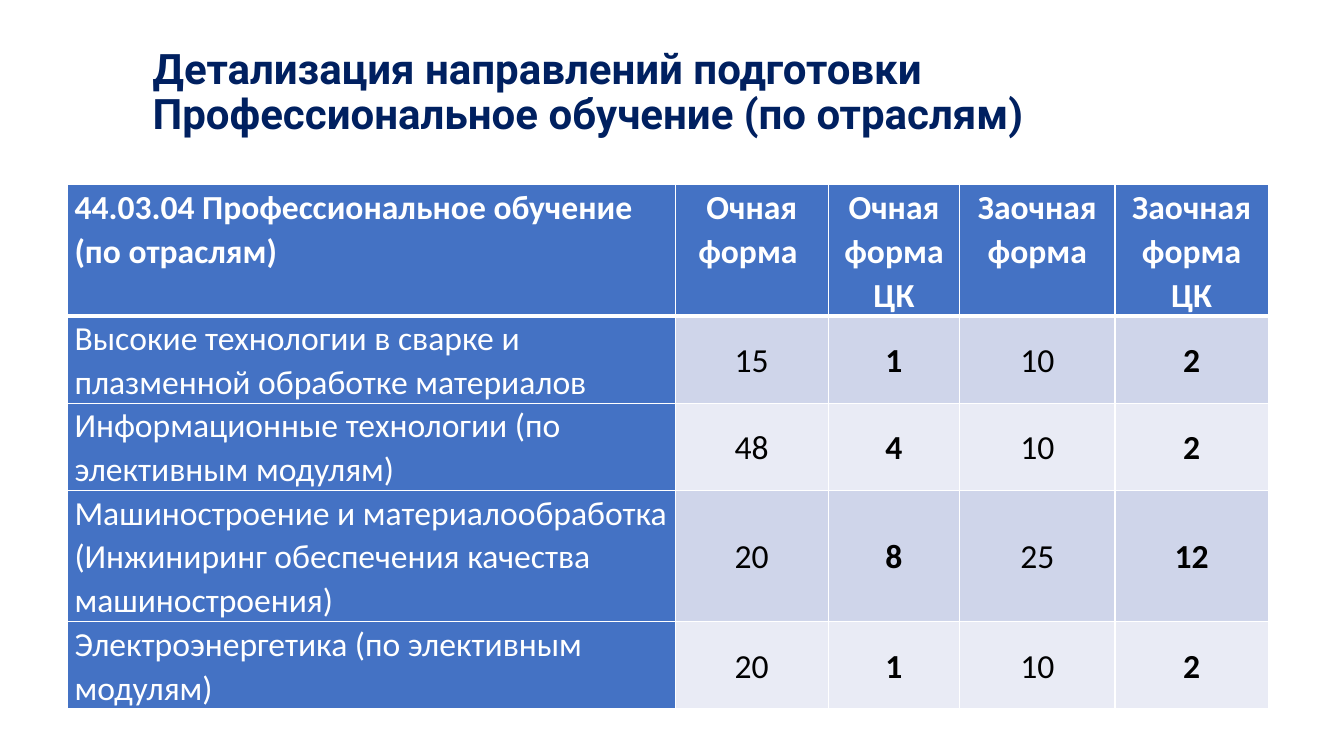
"""Build the slide with the table of places by field of study."""
from dataclasses import dataclass

from lxml.etree import SubElement as Sub
from pptx import Presentation as Deck
from pptx.dml.color import RGBColor as Rgb
from pptx.enum.text import MSO_ANCHOR as Anchor, PP_ALIGN as Align
from pptx.oxml.ns import qn
from pptx.util import Emu, Pt

SCALE = 9525


@dataclass(frozen=True)
class Theme:
    navy: str = "002060"
    blue: str = "4472C4"
    white: str = "FFFFFF"
    black: str = "000000"
    bands: tuple[str, str] = ("CFD5EA", "E9EBF5")
    head_font: str = "Roboto"
    body_font: str = "Calibri"
    head_size: int = 30
    body_size: int = 24
    thin: int = 1
    thick: int = 3


@dataclass(frozen=True)
class Row:
    tall: int
    name: str
    cells: tuple[str, ...]


@dataclass(frozen=True)
class Style:
    fill: str
    ink: str
    bold: bool
    align: Align
    anchor: Anchor
    top: int
    base: int


THEME = Theme()
TITLE = "Детализация направлений подготовки Профессиональное обучение (по отраслям)"
WIDTHS = (579, 146, 125, 148, 146)
ROWS = (
    Row(125, "44.03.04 Профессиональное обучение\n(по отраслям)",
        ("Очная форма ", "Очная форма ЦК", "Заочная форма", "Заочная форма ЦК")),
    Row(83, "Высокие технологии в сварке и плазменной обработке материалов",
        ("15", "1", "10", "2")),
    Row(83, "Информационные технологии (по элективным модулям)",
        ("48", "4", "10", "2")),
    Row(125, "Машиностроение и материалообработка (Инжиниринг обеспечения качества машиностроения)",
        ("20", "8", "25", "12")),
    Row(83, "Электроэнергетика (по элективным модулям)",
        ("20", "1", "10", "2")),
)


def px(count: int) -> Emu:
    """Turn pixels into EMU."""
    return Emu(count * SCALE)


def write(para, text: str, font: str, size: int, ink: str, bold: bool) -> None:
    """Add text to a paragraph, one run per line."""
    for index, line in enumerate(text.split("\n")):
        if index:
            para.add_line_break()
        run = para.add_run()
        run.text = line
        run.font.name = font
        run.font.size = Pt(size)
        run.font.bold = bold
        run.font.color.rgb = Rgb.from_string(ink)


def pick(row: int, col: int) -> Style:
    """Choose the look of a cell from its place in the table."""
    head, side = row == 0, col == 0
    solid = head or side
    return Style(
        fill=THEME.blue if solid else THEME.bands[(row - 1) % 2],
        ink=THEME.white if solid else THEME.black,
        bold=head or (not side and col % 2 == 0),
        align=Align.LEFT if side else Align.CENTER,
        anchor=Anchor.TOP if solid else Anchor.MIDDLE,
        top=THEME.thick if row == 1 else THEME.thin,
        base=THEME.thick if head else THEME.thin,
    )


def edge(cell, style: Style) -> None:
    """Draw the four white borders of a cell."""
    props = cell._tc.get_or_add_tcPr()
    sides = {"L": THEME.thin, "R": THEME.thin, "T": style.top, "B": style.base}
    for side, width in sides.items():
        line = Sub(props, qn(f"a:ln{side}"), w=str(Pt(width)))
        Sub(Sub(line, qn("a:solidFill")), qn("a:srgbClr"), val=THEME.white)


def dress(cell, text: str, style: Style) -> None:
    """Fill one cell with its text, colour and borders."""
    edge(cell, style)
    cell.fill.solid()
    cell.fill.fore_color.rgb = Rgb.from_string(style.fill)
    cell.vertical_anchor = style.anchor
    cell.margin_left = cell.margin_right = px(7)
    cell.margin_top = cell.margin_bottom = 0
    para = cell.text_frame.paragraphs[0]
    para.alignment = style.align
    para.line_spacing = 1.07
    write(para, text, THEME.body_font, THEME.body_size, style.ink, style.bold)


def draw_title(slide) -> None:
    """Place the slide title."""
    frame = slide.shapes.add_textbox(px(136), 0, px(1056), px(178)).text_frame
    frame.word_wrap = True
    frame.vertical_anchor = Anchor.MIDDLE
    para = frame.paragraphs[0]
    para.line_spacing = 0.9
    write(para, TITLE, THEME.head_font, THEME.head_size, THEME.navy, True)


def draw_table(slide) -> None:
    """Place the table and dress every cell."""
    tall = sum(row.tall for row in ROWS)
    table = slide.shapes.add_table(
        len(ROWS), len(WIDTHS), px(64), px(176), px(sum(WIDTHS)), px(tall)).table
    for col, width in zip(table.columns, WIDTHS):
        col.width = px(width)
    for r, row in enumerate(ROWS):
        table.rows[r].height = px(row.tall)
        for c, text in enumerate((row.name, *row.cells)):
            dress(table.cell(r, c), text, pick(r, c))


def main() -> None:
    """Make the deck and save it."""
    deck = Deck()
    deck.slide_width, deck.slide_height = px(1280), px(720)
    slide = deck.slides.add_slide(deck.slide_layouts[6])
    draw_title(slide)
    draw_table(slide)
    deck.save("out.pptx")


if __name__ == "__main__":
    main()
